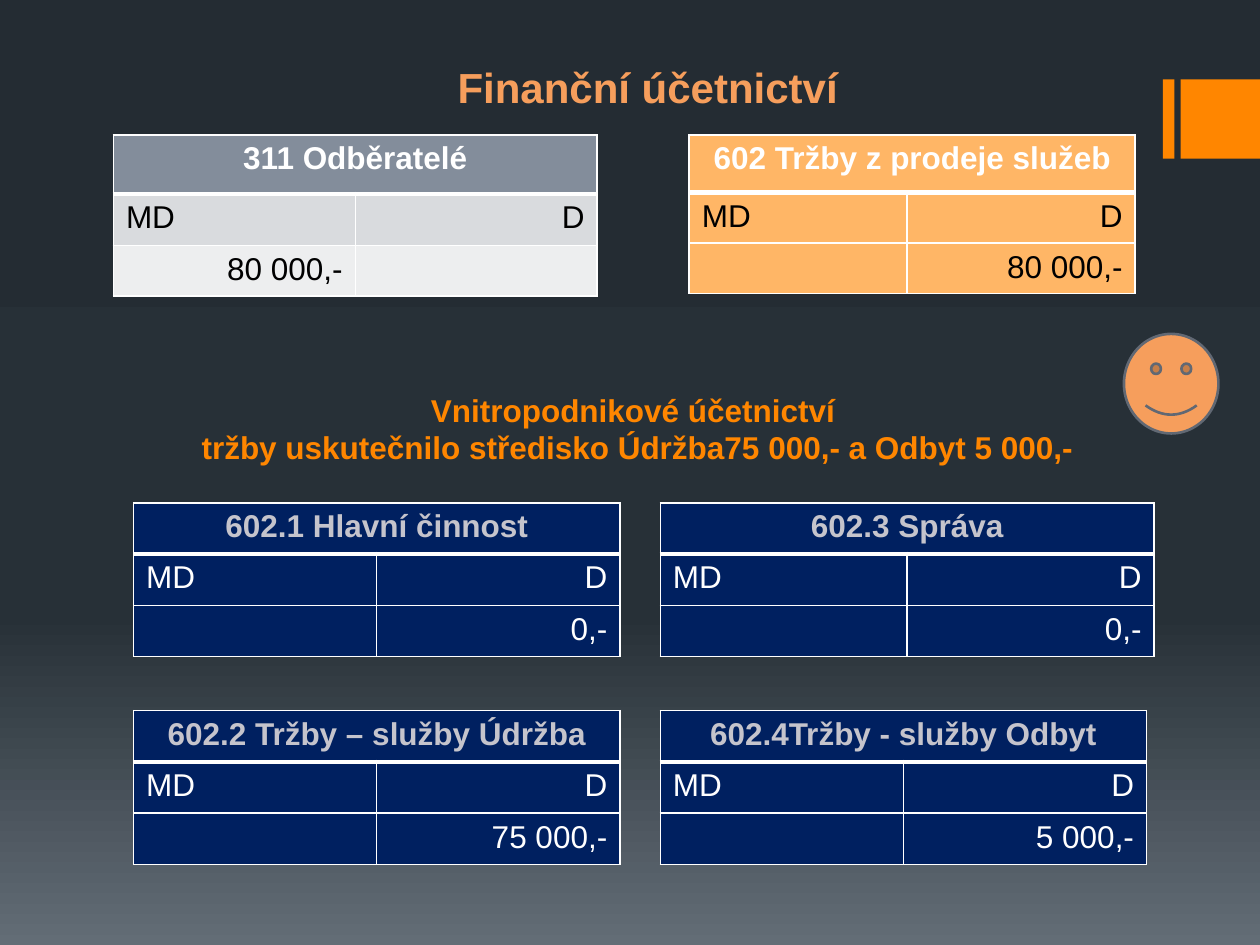
from copy import deepcopy
from lxml.etree import SubElement as Sub
from pptx import Presentation
from pptx.dml.color import RGBColor as RGB
from pptx.enum.shapes import MSO_SHAPE as SHAPE
from pptx.enum.text import MSO_ANCHOR as ANCHOR, PP_ALIGN as ALIGN
from pptx.oxml.ns import qn
from pptx.util import Inches, Pt

WHITE = RGB(0xFF, 0xFF, 0xFF)
BLACK = RGB(0x00, 0x00, 0x00)
ORANGE = RGB(0xFF, 0x86, 0x00)
PEACH = RGB(0xF6, 0x9E, 0x5C)
APRICOT = RGB(0xFF, 0xB6, 0x66)
NAVY = RGB(0x00, 0x20, 0x60)
SILVER = RGB(0xC5, 0xC4, 0xCC)
STEEL = RGB(0x83, 0x8D, 0x9B)
MIST = RGB(0xD9, 0xDB, 0xDE)
PALE = RGB(0xED, 0xEE, 0xEF)
SLATE = RGB(0x61, 0x68, 0x73)
SKY = ((0, RGB(0x24, 0x2C, 0x33)), (0.65, RGB(0x27, 0x30, 0x37)), (1, RGB(0x63, 0x6D, 0x76)))
COLS, ROWS = 100, 75


def write(frame, text, size=18, color=WHITE, bold=False, align=ALIGN.LEFT, before=0):
    para = frame.paragraphs[0]
    para.text = text
    para.alignment = align
    para.space_before = Pt(before)
    for run in para.runs:
        run.font.name = "Arial"
        run.font.size = Pt(size)
        run.font.bold = bold
        run.font.color.rgb = color


class Board:
    def __init__(self, deck):
        self.slide = deck.slides.add_slide(deck.slide_layouts[6])
        self.shapes = self.slide.shapes
        self.unit = (deck.slide_width / COLS, deck.slide_height / ROWS)

    def place(self, *box):
        return [round(part * self.unit[i % 2]) for i, part in enumerate(box)]

    def back(self, stops):
        fill = self.slide.background.fill
        fill.gradient()
        fill.gradient_angle = 270
        first = self.slide.element.find(".//" + qn("a:gs"))
        first.addnext(deepcopy(first))
        for stop, (share, color) in zip(fill.gradient_stops, stops):
            stop.position = share
            stop.color.rgb = color

    def shape(self, kind, box, color, line=None):
        item = self.shapes.add_shape(kind, *self.place(*box))
        item.shadow.inherit = False
        item.fill.solid()
        item.fill.fore_color.rgb = color
        if line:
            item.line.color.rgb = line
            item.line.width = Pt(1.5)
        else:
            item.line.fill.background()

    def text(self, box, words, anchor=ANCHOR.TOP, left=0.1, **style):
        frame = self.shapes.add_textbox(*self.place(*box)).text_frame
        frame.word_wrap = True
        frame.vertical_anchor = anchor
        frame.margin_left = Inches(left)
        write(frame, words, align=ALIGN.CENTER, bold=True, **style)

    def edge(self, cell, **wide):
        props = cell._tc.get_or_add_tcPr()
        for side in "LRTB":
            line = Sub(props, qn("a:ln" + side), w=str(Pt(wide.get(side, 1))))
            Sub(Sub(line, qn("a:solidFill")), qn("a:srgbClr"), val=str(WHITE))

    def account(self, spot, cols, rows, name, debit="", credit="",
                fills=(NAVY,) * 3, head=SILVER, ink=WHITE):
        size = sum(cols), sum(rows)
        table = self.shapes.add_table(3, 2, *self.place(*spot, *size)).table
        for col, wide in zip(table.columns, cols):
            col.width = self.place(wide)[0]
        for row, high in zip(table.rows, rows):
            row.height = self.place(0, high)[1]
        table.cell(0, 0).merge(table.cell(0, 1))
        for r, fill in enumerate(fills):
            for cell in table.rows[r].cells:
                self.edge(cell, **({"B": 3}, {"T": 3}, {})[r])
                cell.fill.solid()
                cell.fill.fore_color.rgb = fill
        write(table.cell(0, 0).text_frame, name, color=head, bold=True, align=ALIGN.CENTER)
        body = ((1, 0, "MD", ALIGN.LEFT), (1, 1, "D", ALIGN.RIGHT),
                (2, 0, debit, ALIGN.RIGHT), (2, 1, credit, ALIGN.RIGHT))
        for r, c, words, align in body:
            if words:
                write(table.cell(r, c).text_frame, words, color=ink, align=align)


def main():
    deck = Presentation()
    deck.slide_width, deck.slide_height = Inches(10), Inches(7.5)
    board = Board(deck)
    board.back(SKY)
    for left, wide in ((92.3, 0.9), (93.7, 6.3)):
        board.shape(SHAPE.RECTANGLE, (left, 6.3, wide, 6.3), ORANGE)
    board.text((10.6, 24.9, 80, 12.6),
               "Vnitropodnikové účetnictví \vtržby uskutečnilo středisko Údržba75 000,- a Odbyt 5 000,-",
               anchor=ANCHOR.BOTTOM, color=ORANGE)
    board.account((9, 10.7), (19.2, 19.2), (4.7, 4.1, 4), "311 Odběratelé",
                  debit="80 000,-", fills=(STEEL, MIST, PALE), head=WHITE, ink=BLACK)
    board.text((5.1, 4.4, 92.1, 6.3), "Finanční účetnictví",
               left=0.15, size=24, color=PEACH, before=3)
    board.account((54.7, 10.7), (17.3, 18.1), (4.6, 4, 4), "602 Tržby z prodeje služeb",
                  credit="80 000,-", fills=(APRICOT,) * 3, head=WHITE, ink=BLACK)
    centres = (("602.1 Hlavní činnost", "0,-", 19.3), ("602.3 Správa", "0,-", 19.6),
               ("602.2 Tržby – služby Údržba", "75 000,-", 19.3),
               ("602.4Tržby - služby Odbyt", "5 000,-", 19.3))
    for i, (name, sum_, wide) in enumerate(centres):
        row, col = divmod(i, 2)
        board.account((10.6 + 41.8 * col, 39.9 + 16.5 * row), (wide,) * 2, (4.07,) * 3,
                      name, credit=sum_)
    board.shape(SHAPE.SMILEY_FACE, (89.2, 26.5, 7.5, 7.9), PEACH, line=SLATE)
    deck.save("out.pptx")


if __name__ == "__main__":
    main()
